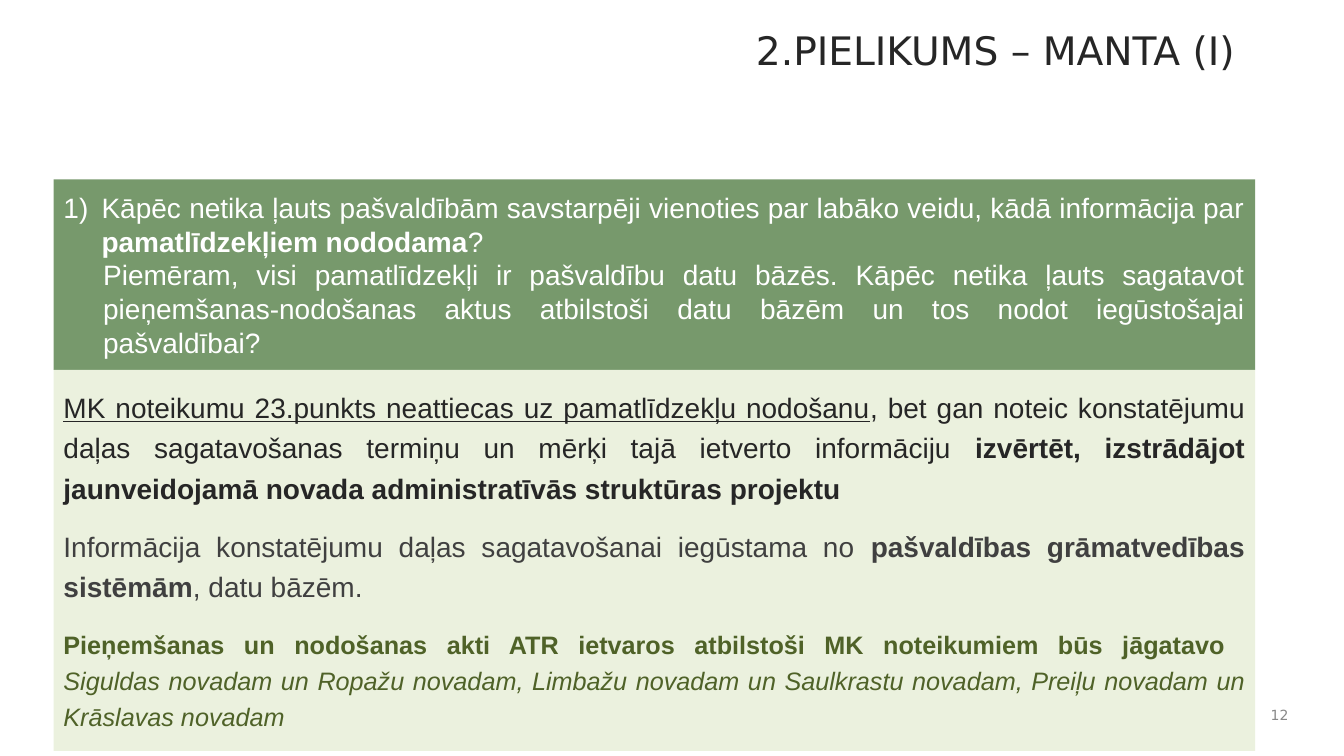
from dataclasses import dataclass
from typing import Optional

from lxml.etree import SubElement
from pptx import Presentation
from pptx.dml.color import RGBColor
from pptx.enum.shapes import MSO_SHAPE
from pptx.enum.text import MSO_ANCHOR, PP_ALIGN
from pptx.oxml.ns import qn
from pptx.util import Cm, Pt


@dataclass(frozen=True)
class Theme:
    heading_font: str = "DejaVu Sans"
    body_font: str = "Arial"
    title_size: int = 28
    body_size: int = 20
    note_size: int = 18
    number_size: int = 10
    dark: str = "262626"
    grey: str = "404040"
    light_grey: str = "898989"
    white: str = "FFFFFF"
    green: str = "4A773C"
    pale_green: str = "EBF1DE"
    olive: str = "4F6228"


THEME = Theme()


@dataclass(frozen=True)
class Span:
    text: str
    bold: bool = False
    italic: bool = False
    underline: bool = False
    break_after: bool = False


@dataclass(frozen=True)
class TextBlock:
    spans: tuple[Span, ...]
    color: str
    size: int = THEME.body_size
    font: str = THEME.body_font
    align: PP_ALIGN = PP_ALIGN.JUSTIFY
    line_spacing: float = 1.0
    space_before: float = 0
    left_indent: float = 0
    hanging: float = 0
    numbering: Optional[str] = None


@dataclass(frozen=True)
class Box:
    left: float
    top: float
    width: float
    height: float
    blocks: tuple[TextBlock, ...]
    anchor: MSO_ANCHOR = MSO_ANCHOR.TOP
    top_inset: float = 0.13
    fill: Optional[str] = None
    opacity: int = 100


def heading(text: str, size: int, color: str) -> TextBlock:
    return TextBlock((Span(text),), color, size, THEME.heading_font, PP_ALIGN.RIGHT)


QUESTION = (
    TextBlock(
        (
            Span("Kāpēc netika ļauts pašvaldībām savstarpēji vienoties par labāko veidu, "
                 "kādā informācija par "),
            Span("pamatlīdzekļiem nododama", bold=True),
            Span("?"),
        ),
        THEME.white, left_indent=0.96, hanging=0.96, numbering="arabicParenR",
    ),
    TextBlock(
        (Span("Piemēram, visi pamatlīdzekļi ir pašvaldību datu bāzēs. Kāpēc netika ļauts "
              "sagatavot pieņemšanas-nodošanas aktus atbilstoši datu bāzēm un tos nodot "
              "iegūstošajai pašvaldībai?"),),
        THEME.white, left_indent=1,
    ),
)

ANSWER = (
    TextBlock(
        (
            Span("MK noteikumu 23.punkts neattiecas uz pamatlīdzekļu nodošanu", underline=True),
            Span(", bet gan noteic konstatējumu daļas sagatavošanas termiņu un mērķi tajā "
                 "ietverto informāciju"),
            Span(" izvērtēt, izstrādājot jaunveidojamā novada administratīvās struktūras "
                 "projektu", bold=True),
        ),
        THEME.dark, line_spacing=1.2,
    ),
    TextBlock(
        (
            Span("Informācija konstatējumu daļas sagatavošanai iegūstama no "),
            Span("pašvaldības grāmatvedības sistēmām", bold=True),
            Span(", datu bāzēm."),
        ),
        THEME.grey, line_spacing=1.2, space_before=13,
    ),
    TextBlock(
        (
            Span("Pieņemšanas un nodošanas akti ATR ietvaros atbilstoši MK noteikumiem būs "
                 "jāgatavo ", bold=True, break_after=True),
            Span("Siguldas novadam un Ropažu novadam, Limbažu novadam un Saulkrastu novadam, "
                 "Preiļu novadam un Krāslavas novadam", italic=True),
        ),
        THEME.olive, THEME.note_size, line_spacing=1.2, space_before=14,
    ),
)

PANEL_LEFT, PANEL_WIDTH = 1.35, 30.28
QUESTION_TOP, QUESTION_HEIGHT = 4.52, 4.8

BOXES = (
    Box(4.7, 0.53, 26.67, 2.29,
        (heading("2.PIELIKUMS – MANTA (I)", THEME.title_size, THEME.dark),)),
    Box(31.6, 17.58, 1.12, 0.84,
        (heading("12", THEME.number_size, THEME.light_grey),), MSO_ANCHOR.MIDDLE),
    Box(PANEL_LEFT, QUESTION_TOP, PANEL_WIDTH, QUESTION_HEIGHT, QUESTION,
        MSO_ANCHOR.MIDDLE, fill=THEME.green, opacity=75),
    Box(PANEL_LEFT, QUESTION_TOP + QUESTION_HEIGHT, PANEL_WIDTH, 9.6, ANSWER,
        top_inset=0.35, fill=THEME.pale_green),
)


def write_block(paragraph, block: TextBlock) -> None:
    properties = paragraph._p.get_or_add_pPr()
    properties.set("marL", str(Cm(block.left_indent)))
    properties.set("indent", str(-Cm(block.hanging)))
    if block.numbering:
        font = SubElement(properties, qn("a:buFont"))
        font.set("typeface", block.font)
        SubElement(properties, qn("a:buAutoNum")).set("type", block.numbering)
    paragraph_format = {
        "alignment": block.align,
        "line_spacing": block.line_spacing,
        "space_before": Pt(block.space_before),
    }
    for name, value in paragraph_format.items():
        setattr(paragraph, name, value)
    for span in block.spans:
        run = paragraph.add_run()
        run.text = span.text
        run_format = {
            "name": block.font,
            "size": Pt(block.size),
            "bold": span.bold,
            "italic": span.italic,
            "underline": span.underline,
        }
        for name, value in run_format.items():
            setattr(run.font, name, value)
        run.font.color.rgb = RGBColor.from_string(block.color)
        if span.break_after:
            paragraph.add_line_break()


def draw_box(slide, box: Box) -> None:
    """Draw a filled panel, or a plain text box when no fill is given."""
    place = [Cm(length) for length in (box.left, box.top, box.width, box.height)]
    if box.fill:
        shape = slide.shapes.add_shape(MSO_SHAPE.RECTANGLE, *place)
        shape.shadow.inherit = False
        shape.fill.solid()
        shape.fill.fore_color.rgb = RGBColor.from_string(box.fill)
        shape.line.fill.background()
        if box.opacity < 100:
            color = shape._element.spPr.find(f"{qn('a:solidFill')}/{qn('a:srgbClr')}")
            SubElement(color, qn("a:alpha")).set("val", str(box.opacity * 1000))
    else:
        shape = slide.shapes.add_textbox(*place)
    frame = shape.text_frame
    frame_format = {
        "word_wrap": True,
        "vertical_anchor": box.anchor,
        "margin_top": Cm(box.top_inset),
    }
    for name, value in frame_format.items():
        setattr(frame, name, value)
    for index, block in enumerate(box.blocks):
        write_block(frame.add_paragraph() if index else frame.paragraphs[0], block)


def main() -> None:
    presentation = Presentation()
    presentation.slide_width, presentation.slide_height = Cm(33.87), Cm(19.05)
    slide = presentation.slides.add_slide(presentation.slide_layouts[6])
    for box in BOXES:
        draw_box(slide, box)
    presentation.save("out.pptx")


if __name__ == "__main__":
    main()
